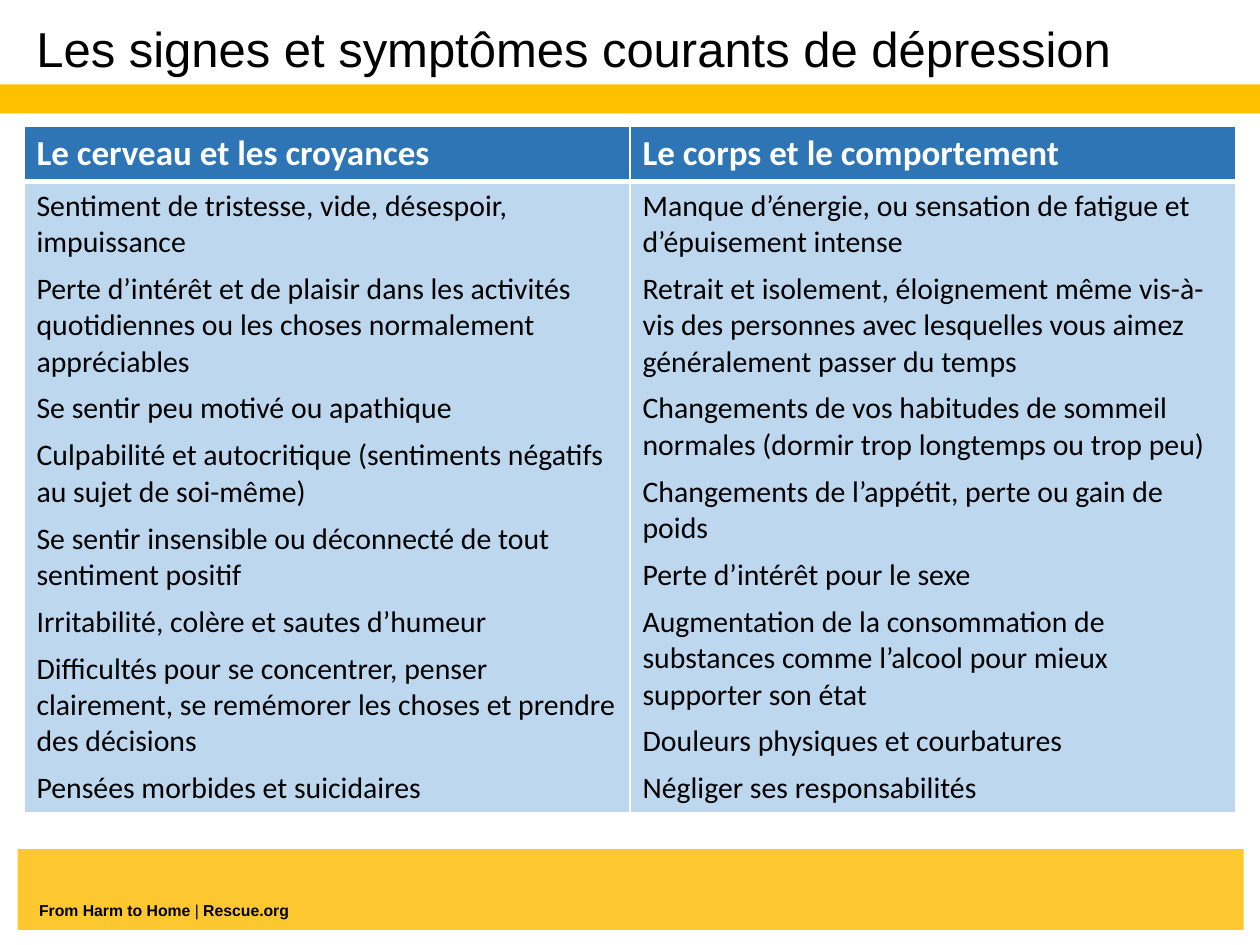
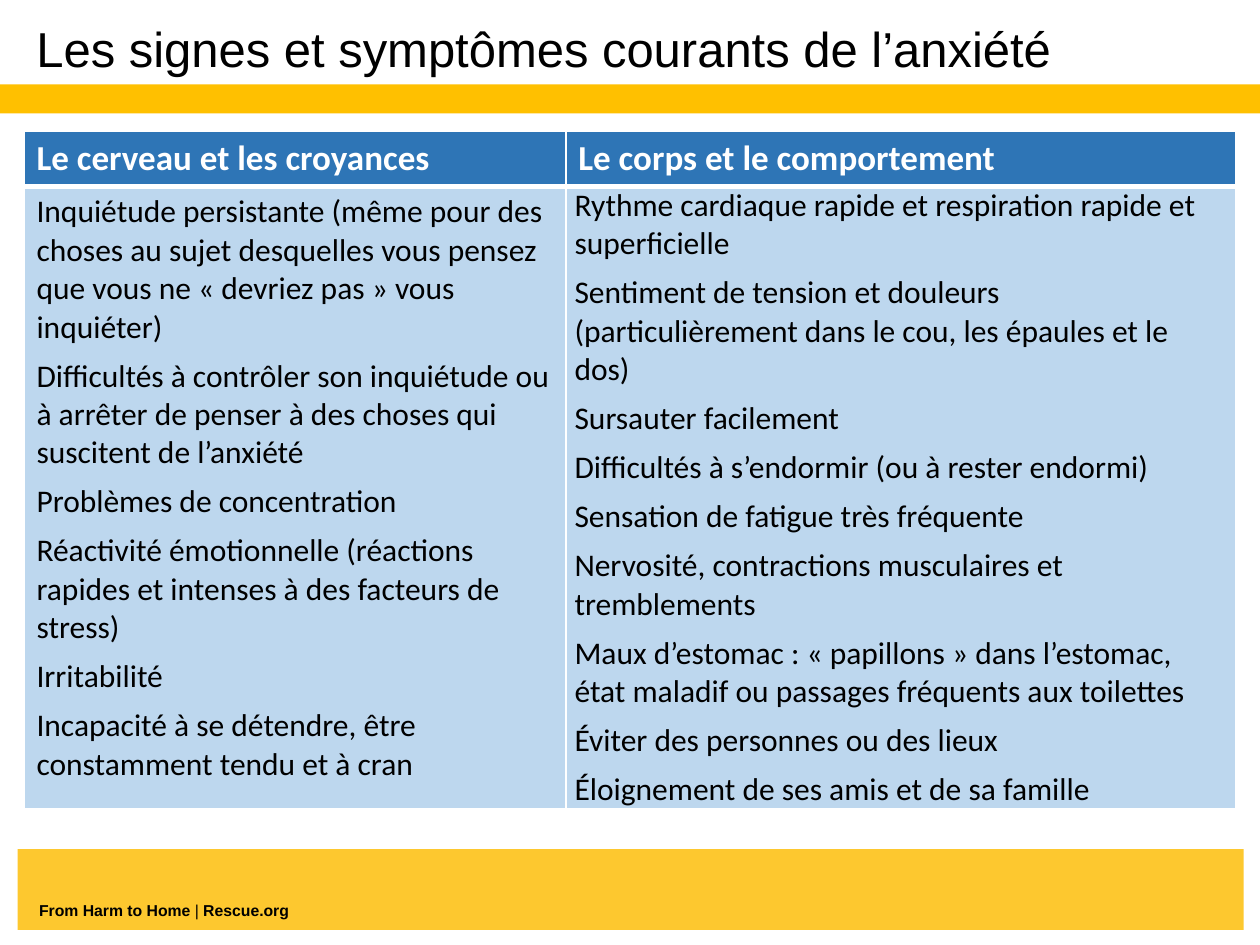
from lxml import etree
from pptx import Presentation, util as u
from pptx.dml.color import RGBColor
from pptx.enum import shapes, text
from pptx.oxml.ns import qn

WIDTH, HEIGHT = 10, 7.5
MARGIN = 0.19
TABLE_WIDTH = WIDTH - 2 * MARGIN
HEADER_HEIGHT = 0.44
BLACK, WHITE = "000000", "FFFFFF"
GOLD, FOOTER_GOLD = "FFC000", "FDC82F"
HEADER_BLUE, BODY_BLUE = "2E75B6", "BDD7EE"
BANDS = [
    (0.14, 6.74, 9.73, 0.64, FOOTER_GOLD),
    (0, 0.67, WIDTH, 0.23, GOLD),
]
FOOTER = [("From Harm to Home ", True), ("|", False), (" Rescue.org", True)]
HEADINGS = ["Le cerveau et les croyances", "Le corps et le comportement"]

SLIDES = [
    {
        "title": "Les signes et symptômes courants de dépression",
        "title_width": WIDTH - MARGIN,
        "top": 1,
        "height": 5.45,
        "first_column": TABLE_WIDTH / 2,
        "size": 17,
        "tight_last_column": False,
        "symptoms": [
            [
                "Sentiment de tristesse, vide, désespoir, impuissance",
                "Perte d’intérêt et de plaisir dans les activités quotidiennes ou les choses normalement appréciables",
                "Se sentir peu motivé ou apathique",
                "Culpabilité et autocritique (sentiments négatifs au sujet de soi-même)",
                "Se sentir insensible ou déconnecté de tout sentiment positif",
                "Irritabilité, colère et sautes d’humeur",
                "Difficultés pour se concentrer, penser clairement, se remémorer les choses et prendre des décisions",
                "Pensées morbides et suicidaires",
            ],
            [
                "Manque d’énergie, ou sensation de fatigue et d’épuisement intense",
                "Retrait et isolement, éloignement même vis-à-vis des personnes avec lesquelles vous aimez généralement passer du temps",
                "Changements de vos habitudes de sommeil normales (dormir trop longtemps ou trop peu)",
                "Changements de l’appétit, perte ou gain de poids",
                "Perte d’intérêt pour le sexe",
                "Augmentation de la consommation de substances comme l’alcool pour mieux supporter son état",
                "Douleurs physiques et courbatures",
                "Négliger ses responsabilités",
            ],
        ],
    },
    {
        "title": "Les signes et symptômes courants de l’anxiété",
        "title_width": 8.62,
        "top": 1.04,
        "height": 5.38,
        "first_column": 4.3,
        "size": 18,
        "tight_last_column": True,
        "symptoms": [
            [
                "Inquiétude persistante (même pour des choses au sujet desquelles vous pensez que vous ne « devriez pas » vous inquiéter)",
                "Difficultés à contrôler son inquiétude ou à arrêter de penser à des choses qui suscitent de l’anxiété",
                "Problèmes de concentration",
                "Réactivité émotionnelle (réactions rapides et intenses à des facteurs de stress)",
                "Irritabilité",
                "Incapacité à se détendre, être constamment tendu et à cran",
            ],
            [
                "Rythme cardiaque rapide et respiration rapide et superficielle",
                "Sentiment de tension et douleurs (particulièrement dans le cou, les épaules et le dos)",
                "Sursauter facilement",
                "Difficultés à s’endormir (ou à rester endormi)",
                "Sensation de fatigue très fréquente",
                "Nervosité, contractions musculaires et tremblements",
                "Maux d’estomac : « papillons » dans l’estomac, état maladif ou passages fréquents aux toilettes",
                "Éviter des personnes ou des lieux",
                "Éloignement de ses amis et de sa famille",
            ],
        ],
    },
]


def color(hex_string):
    return RGBColor.from_string(hex_string)


def style_font(font, name, size, ink, bold=None):
    font.name, font.size, font.bold = name, u.Pt(size), bold
    font.color.rgb = color(ink)


deck = Presentation()
deck.slide_width, deck.slide_height = u.Inches(WIDTH), u.Inches(HEIGHT)

for content in SLIDES:
    page = deck.slides.add_slide(deck.slide_layouts[6])

    for *place, fill in BANDS:
        band = page.shapes.add_shape(shapes.MSO_SHAPE.RECTANGLE, *map(u.Inches, place))
        band.shadow.inherit = False
        band.fill.solid()
        band.fill.fore_color.rgb = color(fill)
        band.line.fill.background()

    footer = page.shapes.add_textbox(*map(u.Inches, (0.31, 7.15, 3.25, 0.15))).text_frame
    footer.word_wrap = True
    footer.vertical_anchor = text.MSO_ANCHOR.BOTTOM
    footer.margin_left = footer.margin_right = footer.margin_top = footer.margin_bottom = 0
    para = footer.paragraphs[0]
    style_font(para.font, "Arial", 9, BLACK)
    for words, bold in FOOTER:
        span = para.add_run()
        span.text, span.font.bold = words, bold

    title_place = (MARGIN, 0.15, content["title_width"], 0.67)
    title = page.shapes.add_textbox(*map(u.Inches, title_place)).text_frame
    title.word_wrap = True
    title.text = content["title"]
    title.paragraphs[0].line_spacing = 0.9
    style_font(title.paragraphs[0].font, "Arial", 28, BLACK)

    table_place = (MARGIN, content["top"], TABLE_WIDTH, content["height"])
    table = page.shapes.add_table(2, 2, *map(u.Inches, table_place)).table
    table.columns[0].width = u.Inches(content["first_column"])
    table.columns[1].width = u.Inches(TABLE_WIDTH - content["first_column"])
    table.rows[0].height = u.Inches(HEADER_HEIGHT)
    table.rows[1].height = u.Inches(content["height"] - HEADER_HEIGHT)

    for column, (heading, symptoms) in enumerate(zip(HEADINGS, content["symptoms"])):
        header, body = table.cell(0, column), table.cell(1, column)
        header.text = heading
        style_font(header.text_frame.paragraphs[0].font, "Calibri", 20, WHITE, True)

        body.text = "\n".join(symptoms)
        for index, para in enumerate(body.text_frame.paragraphs):
            para.space_before = u.Pt(3 if index else 0)
            para.space_after = u.Pt(3)
            style_font(para.font, "Calibri", content["size"], BLACK, False)
        if column == 1 and content["tight_last_column"]:
            body.margin_left = body.margin_right = u.Inches(0.07)
            body.margin_top = body.margin_bottom = 0

        for cell, fill, thick_side in ((header, HEADER_BLUE, "lnB"), (body, BODY_BLUE, "lnT")):
            properties = cell._tc.get_or_add_tcPr()
            for side in ("lnL", "lnR", "lnT", "lnB"):
                width = u.Pt(3 if side == thick_side else 1)
                border = etree.SubElement(properties, qn("a:" + side), w=str(width))
                paint = etree.SubElement(border, qn("a:solidFill"))
                etree.SubElement(paint, qn("a:srgbClr"), val=WHITE)
            cell.fill.solid()
            cell.fill.fore_color.rgb = color(fill)

deck.save("out.pptx")
